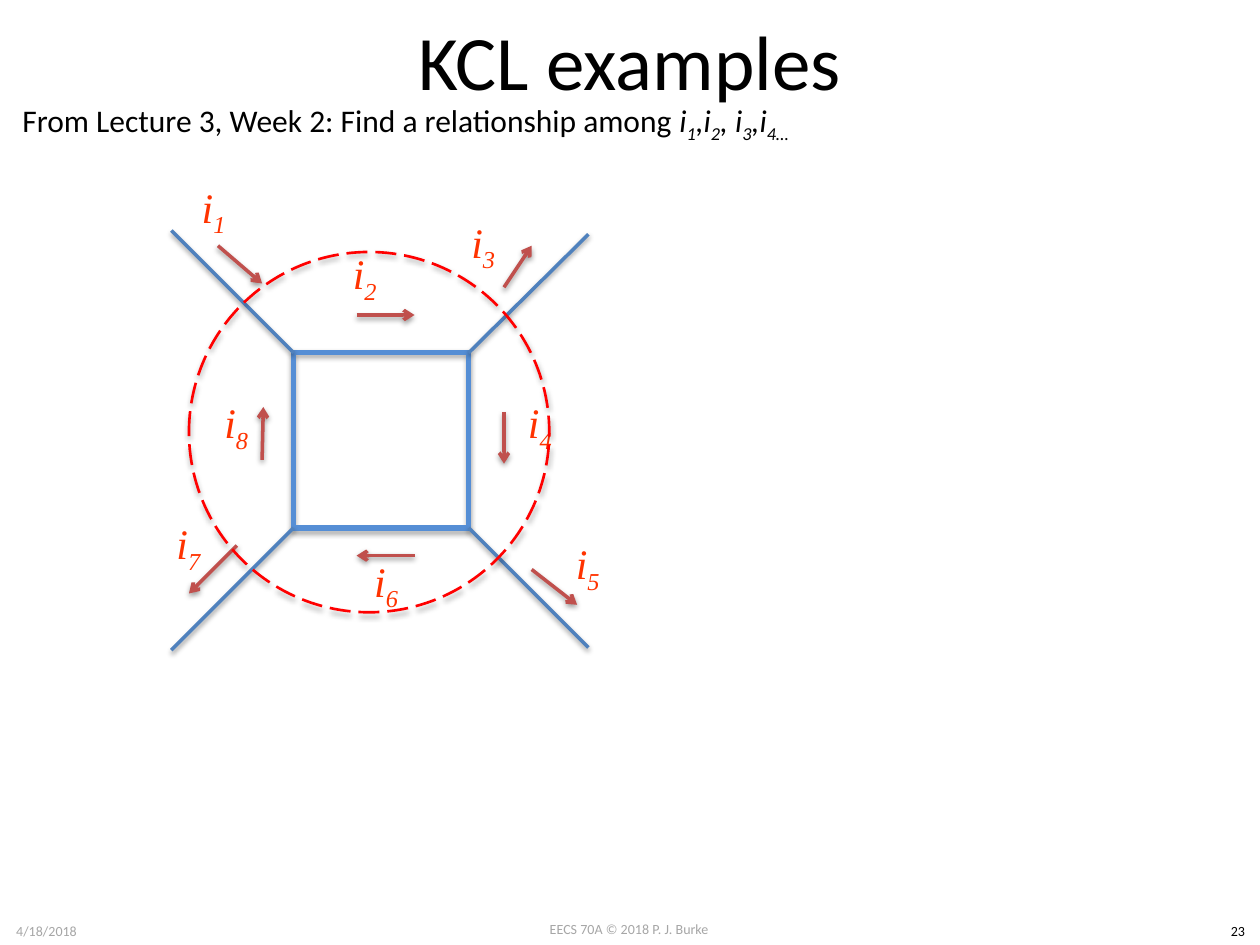
import pptx
import pptx.util
import pptx.dml.color
import pptx.enum.dml
import pptx.enum.shapes
import pptx.enum.text
import pptx.oxml
import pptx.oxml.ns

Inches = pptx.util.Inches
Pt = pptx.util.Pt
RGBColor = pptx.dml.color.RGBColor
ALIGN = pptx.enum.text.PP_ALIGN
ANCHOR = pptx.enum.text.MSO_ANCHOR
SHAPE = pptx.enum.shapes.MSO_SHAPE

BLACK = RGBColor(0x00, 0x00, 0x00)
GREY = RGBColor(0xA6, 0xA6, 0xA6)
ORANGE = RGBColor(0xFF, 0x33, 0x00)
RED = RGBColor(0xFF, 0x00, 0x00)
BRICK = RGBColor(0xC0, 0x50, 0x4D)
WIRE_BLUE = RGBColor(0x4F, 0x81, 0xBD)
LOOP_BLUE = RGBColor(0x55, 0x8E, 0xD5)

FOOTERS = [
    ("EECS 70A © 2018 P. J. Burke", 3.83, 7.26, 2.33, GREY),
    ("4/18/2018", 0, 7.27, 0.74, GREY),
    ("23", 9.65, 7.27, 0.35, BLACK),
]
TITLE = "KCL examples"
QUESTION = "From Lecture 3, Week 2: Find a relationship among "
UNKNOWNS = [("i", "1"), (",i", "2"), (", i", "3"), (",i", "4…")]

CURRENTS = [
    ("1", (1.31, 1.36), (1.73, 1.95), (2.08, 2.25)),
    ("2", (2.51, 1.89), (2.83, 2.5), (3.29, 2.5)),
    ("3", (3.45, 1.64), (4, 2.28), (4.22, 1.95)),
    ("4", (3.9, 3.07), (4, 3.27), (4, 3.68)),
    ("5", (4.28, 4.19), (4.22, 4.52), (4.58, 4.8)),
    ("6", (2.68, 4.33), (3.29, 4.41), (2.83, 4.41)),
    ("7", (1.11, 4.03), (1.88, 4.33), (1.5, 4.71)),
    ("8", (1.49, 3.07), (2.08, 3.65), (2.09, 3.23)),
]
LABEL_SIZE = (0.77, 0.61)

LOOP_LEFT, LOOP_TOP, LOOP_SIDE = 2.33, 2.8, 1.39
LOOP_RIGHT, LOOP_BOTTOM = LOOP_LEFT + LOOP_SIDE, LOOP_TOP + LOOP_SIDE
WIRES = [
    ((LOOP_RIGHT, LOOP_TOP), (4.67, 1.86)),
    ((LOOP_LEFT, LOOP_TOP), (1.36, 1.83)),
    ((LOOP_RIGHT, LOOP_BOTTOM), (4.67, 5.14)),
    ((LOOP_LEFT, LOOP_BOTTOM), (1.36, 5.16)),
]
SURFACE = (1.5, 2, 2.86, 2.86)


def add_shadow(part, opacity, distance):
    part._element.spPr.append(pptx.oxml.parse_xml(
        f'<a:effectLst {pptx.oxml.ns.nsdecls("a")}>'
        f'<a:outerShdw blurRad="{Pt(3.1)}" dist="{Pt(distance)}" dir="5400000" rotWithShape="0">'
        f'<a:srgbClr val="000000"><a:alpha val="{opacity * 1000}"/></a:srgbClr>'
        '</a:outerShdw></a:effectLst>'))


def add_line(slide, start, end, color, arrow=False):
    line = slide.shapes.add_connector(
        pptx.enum.shapes.MSO_CONNECTOR.STRAIGHT,
        *(Inches(v) for v in (*start, *end)))
    line.line.color.rgb = color
    line.line.width = Pt(2)
    if arrow:
        line.line._get_or_add_ln().append(pptx.oxml.parse_xml(
            f'<a:tailEnd {pptx.oxml.ns.nsdecls("a")} type="arrow"/>'))
    add_shadow(line, 38, 1.6)


def add_outline(slide, kind, box, color, width, dash=None):
    outline = slide.shapes.add_shape(kind, *(Inches(v) for v in box))
    outline.fill.background()
    outline.line.color.rgb = color
    outline.line.width = Pt(width)
    if dash:
        outline.line.dash_style = dash
    add_shadow(outline, 35, 1.8)


def add_text(slide, box, runs, size, color, font="Calibri",
             align=ALIGN.CENTER, anchor=ANCHOR.TOP, wrap=True):
    frame = slide.shapes.add_textbox(*(Inches(v) for v in box)).text_frame
    frame.word_wrap = wrap
    frame.vertical_anchor = anchor
    paragraph = frame.paragraphs[0]
    paragraph.alignment = align
    for text, italic, subscript in runs:
        run = paragraph.add_run()
        run.text = text
        run.font.name = font
        run.font.size = Pt(size)
        run.font.color.rgb = color
        run.font.italic = italic
        if subscript:
            run.font._element.set("baseline", "-25000")


def symbol(letter, index):
    return [(letter, True, False), (index, True, True)]


def main():
    deck = pptx.Presentation()
    deck.slide_width, deck.slide_height = Inches(10), Inches(7.5)
    slide = deck.slides.add_slide(deck.slide_layouts[6])

    for text, left, top, width, color in FOOTERS:
        add_text(slide, (left, top, width, 0.24), [(text, False, False)], 8, color)
    add_text(slide, (0.5, 0, 9, 0.95), [(TITLE, False, False)], 44, BLACK,
             anchor=ANCHOR.MIDDLE)
    question = [(QUESTION, False, False)]
    for letter, index in UNKNOWNS:
        question += symbol(letter, index)
    add_text(slide, (0.08, 0.75, 6.42, 0.4), question, 18, BLACK,
             align=ALIGN.LEFT, wrap=False)

    add_outline(slide, SHAPE.RECTANGLE,
                (LOOP_LEFT, LOOP_TOP, LOOP_SIDE, LOOP_SIDE), LOOP_BLUE, 3)
    for corner, end in WIRES:
        add_line(slide, corner, end, WIRE_BLUE)
    for index, label_at, start, end in CURRENTS:
        add_line(slide, start, end, BRICK, arrow=True)
        add_text(slide, (*label_at, *LABEL_SIZE), symbol("i", index), 24, ORANGE,
                 font="Times New Roman", anchor=ANCHOR.MIDDLE)
    add_outline(slide, SHAPE.OVAL, SURFACE, RED, 1.5,
                pptx.enum.dml.MSO_LINE.LONG_DASH)

    deck.save("out.pptx")


if __name__ == "__main__":
    main()
